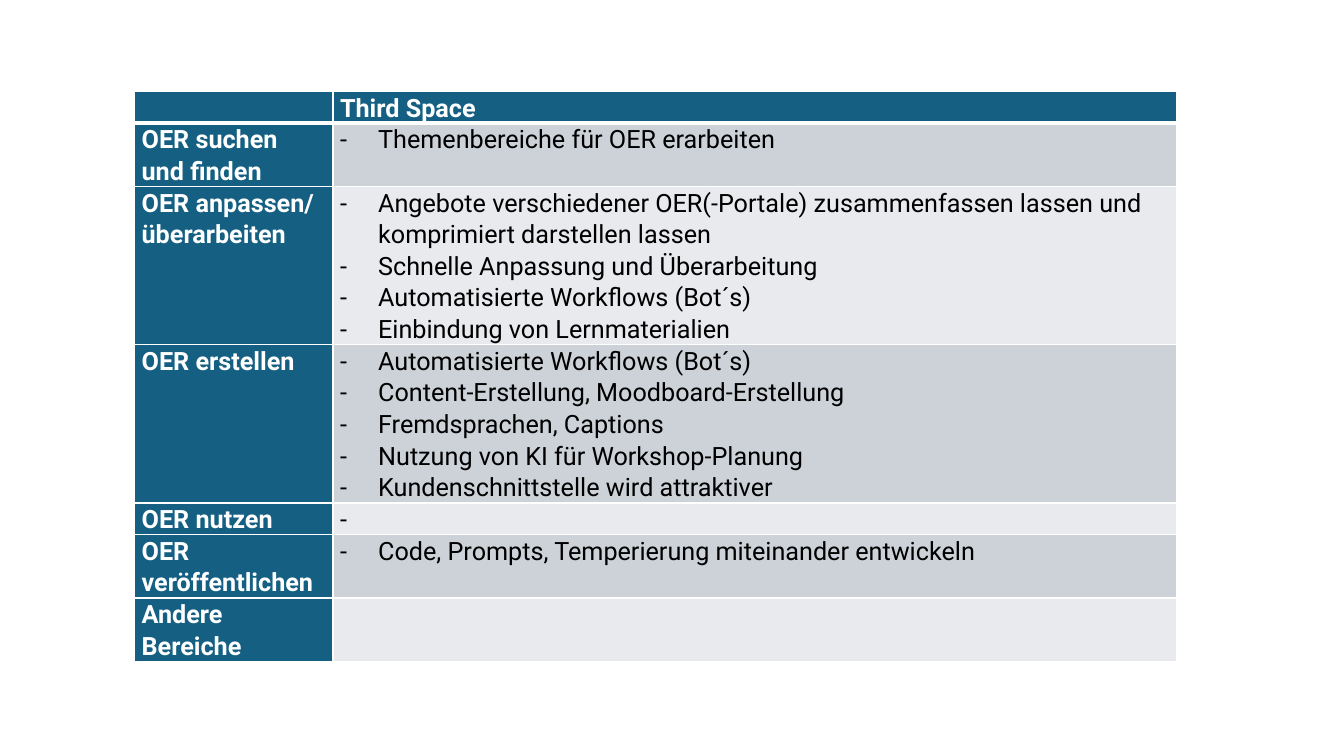
from lxml import etree
from pptx import Presentation
from pptx import util as u
from pptx.dml.color import RGBColor
from pptx.enum import text
from pptx.oxml import ns

HEADER = ["", "Third Space"]
# Label, its number of lines, bullet points
AREAS = [
    ("OER suchen und finden", 2, ["Themenbereiche für OER erarbeiten"]),
    ("OER anpassen/ überarbeiten", 5, [
        "Angebote verschiedener OER(-Portale) zusammenfassen lassen"
        " und komprimiert darstellen lassen",
        "Schnelle Anpassung und Überarbeitung",
        "Automatisierte Workflows (Bot´s)",
        "Einbindung von Lernmaterialien",
    ]),
    ("OER erstellen", 5, [
        "Automatisierte Workflows (Bot´s)",
        "Content-Erstellung, Moodboard-Erstellung",
        "Fremdsprachen, Captions",
        "Nutzung von KI für Workshop-Planung",
        "Kundenschnittstelle wird attraktiver",
    ]),
    ("OER nutzen", 1, [" "]),  # bullet still without wording
    ("OER veröffentlichen", 2,
     ["Code, Prompts, Temperierung miteinander entwickeln"]),
    ("Andere Bereiche", 2, []),
]

FONT = "Roboto"
TEAL = RGBColor(0x15, 0x60, 0x82)
BANDS = [RGBColor(0xCC, 0xD2, 0xD8), RGBColor(0xE8, 0xEA, 0xED)]
WHITE = RGBColor(0xFF, 0xFF, 0xFF)
BLACK = RGBColor(0, 0, 0)

LEFT, TOP = u.Cm(3.39), u.Cm(2.31)
COLUMNS = [u.Cm(5), u.Cm(21.25)]
LINE_HEIGHT = u.Cm(0.79)
INSET = u.Cm(0.18)
INDENT = u.Cm(0.96)


def put_text(cell, lines, color=WHITE, bold=True, bullet=None):
    tf = cell.text_frame
    for i, line in enumerate(lines):
        p = tf.add_paragraph() if i else tf.paragraphs[0]
        p.alignment = text.PP_ALIGN.LEFT
        p.line_spacing = 1.07
        p.space_after = u.Pt(8 if i == len(lines) - 1 else 0)
        if bullet:
            pPr = p._p.get_or_add_pPr()
            pPr.set("marL", str(INDENT))
            pPr.set("indent", str(-INDENT))
            etree.SubElement(pPr, ns.qn("a:buFont")).set("typeface", FONT)
            etree.SubElement(pPr, ns.qn("a:buChar")).set("char", bullet)
        r = p.add_run()
        r.text = line
        r.font.name = FONT
        r.font.size = u.Pt(18)
        r.font.bold = bold
        r.font.color.rgb = color


def style_cell(cell, fill, top=1, bottom=1):
    """Set insets, white borders (widths in points) and fill."""
    cell.margin_left = cell.margin_right = INSET
    cell.margin_top = cell.margin_bottom = 0
    cell.vertical_anchor = text.MSO_ANCHOR.TOP
    tcPr = cell._tc.get_or_add_tcPr()
    for side, width in (("L", 1), ("R", 1), ("T", top), ("B", bottom)):
        ln = etree.SubElement(tcPr, ns.qn("a:ln" + side))
        ln.set("w", str(u.Pt(width)))
        solid = etree.SubElement(ln, ns.qn("a:solidFill"))
        etree.SubElement(solid, ns.qn("a:srgbClr")).set("val", str(WHITE))
    cell.fill.solid()
    cell.fill.fore_color.rgb = fill


def main():
    prs = Presentation()
    prs.slide_width, prs.slide_height = u.Cm(33.87), u.Cm(19.05)
    s = prs.slides.add_slide(prs.slide_layouts[6])

    heights = [LINE_HEIGHT * n for n in [1] + [n for _, n, _ in AREAS]]
    table = s.shapes.add_table(len(heights), len(COLUMNS), LEFT, TOP,
                               sum(COLUMNS), sum(heights)).table
    table.first_row = table.horz_banding = False
    for column, width in zip(table.columns, COLUMNS):
        column.width = width
    for row, height in zip(table.rows, heights):
        row.height = height

    for col, title in enumerate(HEADER):
        style_cell(table.cell(0, col), TEAL, bottom=3)
        put_text(table.cell(0, col), [title])
    for row, (label, _, points) in enumerate(AREAS, 1):
        top = 3 if row == 1 else 1
        style_cell(table.cell(row, 0), TEAL, top=top)
        put_text(table.cell(row, 0), [label])
        style_cell(table.cell(row, 1), BANDS[(row - 1) % 2], top=top)
        put_text(table.cell(row, 1), points, color=BLACK, bold=False,
                 bullet="-")
    prs.save("out.pptx")


if __name__ == "__main__":
    main()
